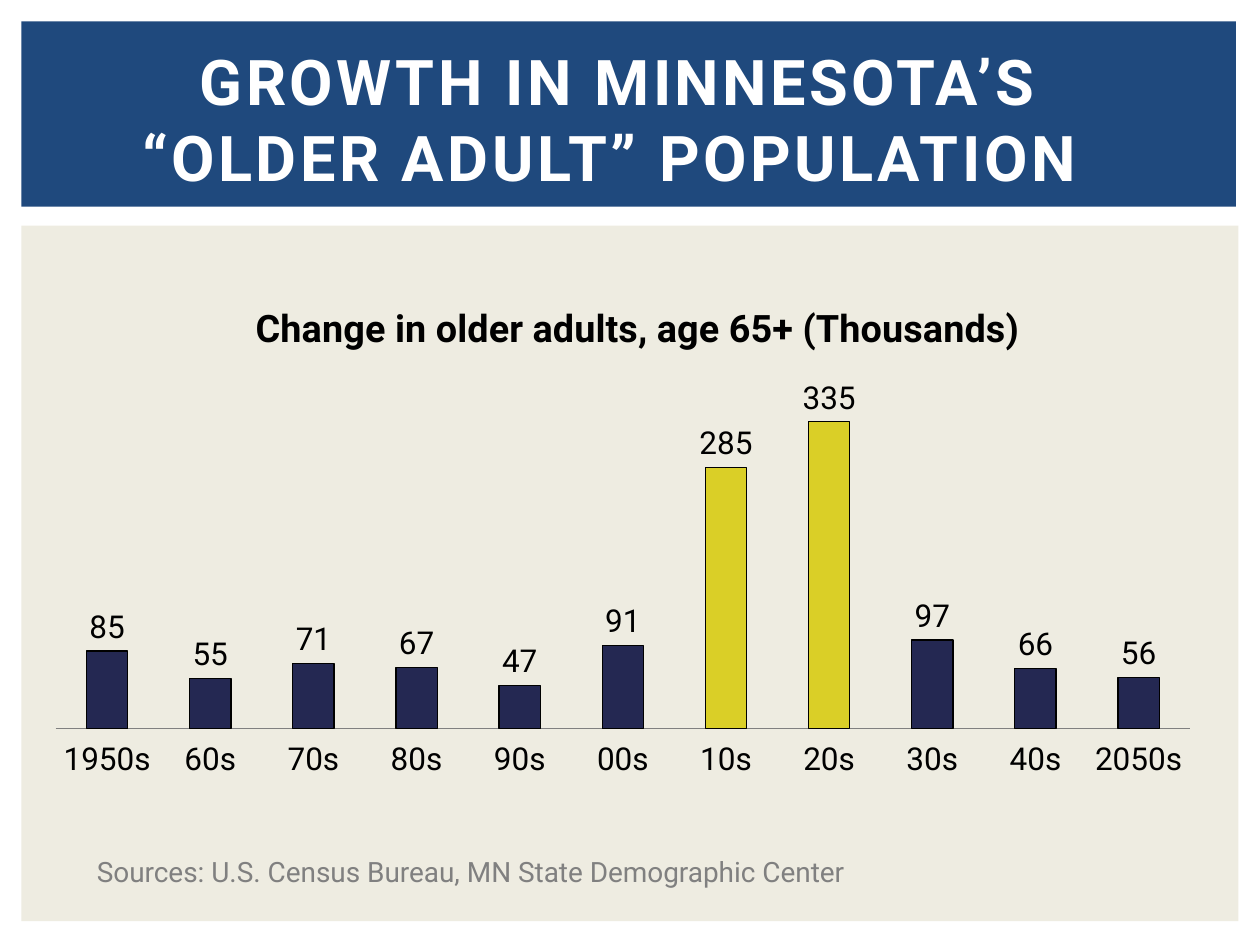
from dataclasses import dataclass

from lxml.etree import SubElement
from pptx import Presentation
from pptx.chart.data import CategoryChartData
from pptx.dml.color import RGBColor
from pptx.enum.chart import XL_CHART_TYPE as ChartType
from pptx.enum.chart import XL_LABEL_POSITION as LabelPosition
from pptx.enum.chart import XL_TICK_LABEL_POSITION as TickLabels
from pptx.enum.chart import XL_TICK_MARK as TickMark
from pptx.enum.shapes import MSO_SHAPE as Shape
from pptx.enum.text import MSO_ANCHOR as Anchor
from pptx.enum.text import MSO_AUTO_SIZE as AutoSize
from pptx.enum.text import PP_ALIGN as Align
from pptx.oxml.ns import qn
from pptx.util import Inches, Pt

COLUMNS, ROWS = 100, 75
DECADES = ["1950s", "60s", "70s", "80s", "90s", "00s", "10s", "20s", "30s", "40s", "2050s"]
CHANGES = [85, 55, 71, 67, 47, 91, 285, 335, 97, 66, 56]
PEAK_DECADES = ("10s", "20s")


@dataclass(frozen=True)
class Theme:
    font: str = "Roboto"
    banner: str = "1F497D"
    panel: str = "EEECE1"
    bar: str = "242852"
    peak: str = "DACF27"
    ink: str = "000000"
    light: str = "FFFFFF"
    muted: str = "808080"
    title_size: float = 36
    chart_title_size: float = 21.6
    chart_size: float = 18
    source_size: float = 16


class SlideBuilder:
    def __init__(self, deck, theme):
        self.deck = deck
        self.theme = theme
        self.page = deck.slides.add_slide(deck.slide_layouts.get_by_name("Title Only"))

    def place(self, left, top, width, height):
        """Turn grid columns and rows into slide lengths."""
        column = self.deck.slide_width / COLUMNS
        row = self.deck.slide_height / ROWS
        return [round(n) for n in (left * column, top * row, width * column, height * row)]

    def style(self, font, size, color, bold=False):
        font.name = self.theme.font
        font.size = Pt(size)
        font.bold = bold
        font.color.rgb = RGBColor.from_string(color)

    def fill(self, fill, color):
        fill.solid()
        fill.fore_color.rgb = RGBColor.from_string(color)

    def panel(self, area, color):
        box = self.page.shapes.add_shape(Shape.RECTANGLE, *self.place(*area))
        box.shadow.inherit = False
        self.fill(box.fill, color)
        box.line.fill.background()

    def title(self, area, lines):
        box = self.page.shapes.title
        self.page.shapes._spTree.append(box._element)  # in front of the panels
        box.left, box.top, box.width, box.height = self.place(*area)
        frame = box.text_frame
        frame.auto_size = AutoSize.NONE
        frame.vertical_anchor = Anchor.MIDDLE
        para = frame.paragraphs[0]
        para.alignment = Align.CENTER
        for number, line in enumerate(lines):
            if number:
                para.add_line_break()
            span = para.add_run()
            span.text = line
            self.style(span.font, self.theme.title_size, self.theme.light, bold=True)
            span.font._element.set("spc", "200")

    def text(self, area, words):
        frame = self.page.shapes.add_textbox(*self.place(*area)).text_frame
        frame.word_wrap = True
        span = frame.paragraphs[0].add_run()
        span.text = words
        self.style(span.font, self.theme.source_size, self.theme.muted)

    def pin(self, part, **shares):
        """Give a chart part a fixed place, in shares of the chart."""
        layout = part.find(qn("c:layout"))
        if layout is None:
            layout = part.get_or_add_layout()
        for child in list(layout):
            layout.remove(child)
        manual = SubElement(layout, qn("c:manualLayout"))
        if "w" in shares:
            SubElement(manual, qn("c:layoutTarget"), val="inner")
        for mode in ("xMode", "yMode"):
            SubElement(manual, qn(f"c:{mode}"), val="edge")
        for name, share in shares.items():
            SubElement(manual, qn(f"c:{name}"), val=str(share))

    def column_chart(self, area, heading, categories, values, peaks):
        theme = self.theme
        data = CategoryChartData(number_format="#,##0")
        data.categories = categories
        data.add_series("Series 1", values)
        chart = self.page.shapes.add_chart(
            ChartType.COLUMN_CLUSTERED, *self.place(*area), data).chart
        self.style(chart.font, theme.chart_size, theme.ink)
        chart.has_legend = False

        chart.has_title = True
        span = chart.chart_title.text_frame.paragraphs[0].add_run()
        span.text = heading
        self.style(span.font, theme.chart_title_size, theme.ink, bold=True)
        chart.chart_title.include_in_layout = False
        self.pin(chart.chart_title._element, x=0.18, y=0.04)

        chart.value_axis.minimum_scale = 0
        chart.value_axis.maximum_scale = 400
        chart.value_axis.has_major_gridlines = False
        chart.value_axis.visible = False
        axis = chart.category_axis
        axis.major_tick_mark = TickMark.NONE
        axis.tick_label_position = TickLabels.LOW
        axis.format.line.color.rgb = RGBColor.from_string(theme.muted)

        plot = chart.plots[0]
        plot.gap_width = 150
        plot.overlap = -25
        plot.vary_by_categories = False
        plot.has_data_labels = True
        labels = plot.data_labels
        labels.show_value = True
        labels.position = LabelPosition.OUTSIDE_END
        labels.number_format = "#,##0"
        labels.number_format_is_linked = False
        self.style(labels.font, theme.chart_size, theme.ink)

        series = plot.series[0]
        self.outline_bar(series.format, theme.bar)
        for peak in peaks:
            self.outline_bar(series.points[categories.index(peak)].format, theme.peak)
        plot_area = chart._chartSpace.chart.plotArea
        if plot_area.find(qn("c:layout")) is None:
            plot_area.insert(0, plot_area.makeelement(qn("c:layout")))
        self.pin(plot_area, x=0.02, y=0.16, w=0.94, h=0.66)

    def outline_bar(self, look, color):
        self.fill(look.fill, color)
        look.line.color.rgb = RGBColor.from_string(self.theme.ink)
        look.line.width = Pt(0.75)


def main():
    deck = Presentation()
    deck.slide_width, deck.slide_height = Inches(10), Inches(7.5)
    theme = Theme()
    slide = SlideBuilder(deck, theme)
    slide.panel((1.7, 17.9, 96.6, 55.2), theme.panel)
    slide.panel((1.7, 1.7, 96.4, 14.7), theme.banner)
    slide.title((3.3, 0, 91.7, 18.8), ["GROWTH IN MINNESOTA’S", "“OLDER ADULT” POPULATION "])
    slide.column_chart((2.5, 21.7, 95.8, 44.1), "Change in older adults, age 65+ (Thousands)",
                       DECADES, CHANGES, PEAK_DECADES)
    slide.text((6.7, 67.3, 75.4, 3.7), "Sources: U.S. Census Bureau, MN State Demographic Center")
    deck.save("out.pptx")


if __name__ == "__main__":
    main()
